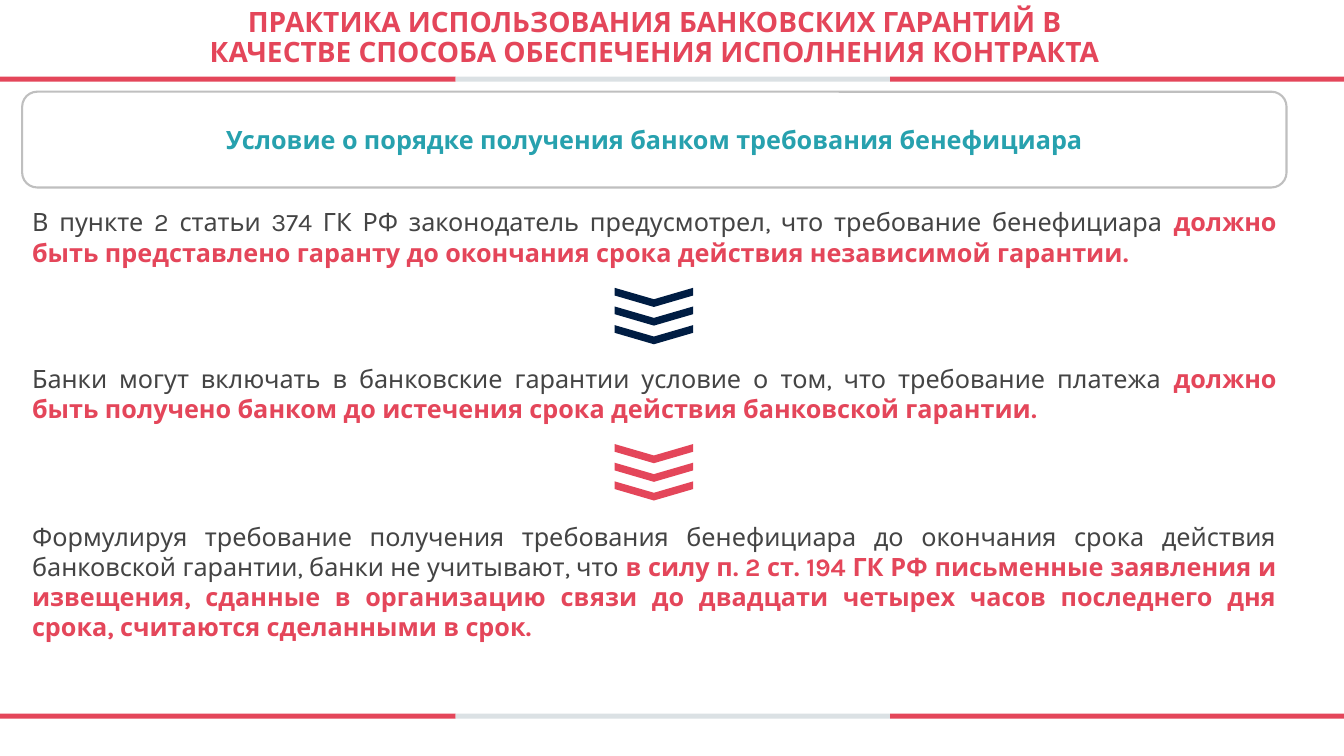
from dataclasses import dataclass

from pptx import Presentation
from pptx.dml.color import RGBColor
from pptx.enum.shapes import MSO_SHAPE as SHAPE
from pptx.enum.text import MSO_ANCHOR as ANCHOR, MSO_AUTO_SIZE as FIT, PP_ALIGN as ALIGN
from pptx.util import Inches, Pt


@dataclass(frozen=True)
class Theme:
    font: str = "Karla"
    red: str = "E4465A"
    teal: str = "27A1AE"
    navy: str = "001D43"
    text: str = "444444"
    pale: str = "DBE1E4"
    border: str = "BFBFBF"
    white: str = "FFFFFF"
    title_size: int = 20
    body_size: int = 18


T = Theme()

# Content
TITLE = ("ПРАКТИКА ИСПОЛЬЗОВАНИЯ БАНКОВСКИХ ГАРАНТИЙ В КАЧЕСТВЕ СПОСОБА "
         "ОБЕСПЕЧЕНИЯ ИСПОЛНЕНИЯ КОНТРАКТА")
HEADING = "Условие о порядке получения банком требования бенефициара"
# top, height, plain text, highlighted text
STEPS = [
    (2.0, 0.71,
     "В пункте 2 статьи 374 ГК РФ законодатель предусмотрел, что требование бенефициара ",
     "должно быть представлено гаранту до окончания срока действия независимой гарантии."),
    (3.55, 0.71,
     "Банки могут включать в банковские гарантии условие о том, что требование платежа ",
     "должно быть получено банком до истечения срока действия банковской гарантии."),
    (5.12, 1.31,
     "Формулируя требование получения требования бенефициара до окончания срока действия "
     "банковской гарантии, банки не учитывают, что ",
     "в силу п. 2 ст. 194 ГК РФ письменные заявления и извещения, сданные в организацию "
     "связи до двадцати четырех часов последнего дня срока, считаются сделанными в срок."),
]
ARROWS = [(2.56, T.navy), (4.11, T.red)]  # top of the first chevron, colour

# Layout
LEFT, WIDTH = 0.22, 12.54
BAR_TOPS, BAR_HEIGHT = (0.76, 7.08), 0.05
BAR_PARTS = [(0, 4.52, T.red), (4.52, 8.83, T.pale), (8.83, 13.33, T.red)]
CHEVRON_LEFT, CHEVRON_W, CHEVRON_H, CHEVRON_STEP = 6.39, 0.19, 0.78, 0.185


def box(left, top, width, height):
    return [Inches(v) for v in (left, top, width, height)]


def add_shape(kind, area, fill, adj=None, line=None):
    sp = slide.shapes.add_shape(kind, *area)
    sp.shadow.inherit = False
    sp.fill.solid()
    sp.fill.fore_color.rgb = RGBColor.from_string(fill)
    if line:
        sp.line.color.rgb = RGBColor.from_string(line)
        sp.line.width = Pt(1.5)
    else:
        sp.line.fill.background()
    if adj is not None:
        sp.adjustments[0] = adj
    return sp


def write(tf, runs, size=T.body_size, align=ALIGN.CENTER, anchor=ANCHOR.MIDDLE,
          spacing=None, after=0):
    """Fill a text frame with one paragraph of (text, colour, bold) runs."""
    tf.word_wrap = True
    tf.vertical_anchor = anchor
    p = tf.paragraphs[0]
    p.alignment, p.line_spacing = align, spacing
    p.space_before, p.space_after = Pt(0), Pt(after)
    for text, color, bold in runs:
        r = p.add_run()
        r.text = text
        r.font.name, r.font.size, r.font.bold = T.font, Pt(size), bold
        r.font.color.rgb = RGBColor.from_string(color)


prs = Presentation()
prs.slide_width, prs.slide_height = Inches(13.33), Inches(7.5)
slide = prs.slides.add_slide(prs.slide_layouts[5])

# Striped bars under the title and at the foot
for top in BAR_TOPS:
    for start, end, color in BAR_PARTS:
        add_shape(SHAPE.RECTANGLE, box(start, top, end - start, BAR_HEIGHT), color)

# Title
title = slide.shapes.title
title.left, title.top, title.width, title.height = box(1.97, 0, 9.04, 0.76)
write(title.text_frame, [(TITLE, T.red, True)], size=T.title_size, spacing=0.9)
title.text_frame.auto_size = FIT.NONE

# Heading panel
panel = add_shape(SHAPE.ROUNDED_RECTANGLE, box(LEFT, 0.91, WIDTH, 0.95), T.white,
                  adj=0.157, line=T.border)
write(panel.text_frame, [(HEADING, T.teal, True)])

# Steps of the argument
for top, height, plain, strong in STEPS:
    tf = slide.shapes.add_textbox(*box(LEFT, top, WIDTH, height)).text_frame
    write(tf, [(plain, T.text, False), (strong, T.red, True)],
          align=ALIGN.JUSTIFY, anchor=ANCHOR.TOP, after=12)
    tf.auto_size = FIT.SHAPE_TO_FIT_TEXT

# Triple chevrons pointing down between the steps
for top, color in ARROWS:
    chevrons = [add_shape(SHAPE.CHEVRON,
                          box(CHEVRON_LEFT, top + i * CHEVRON_STEP, CHEVRON_W, CHEVRON_H),
                          color, adj=0.598) for i in range(3)]
    for sp in chevrons:
        sp.rotation = 90
    slide.shapes.add_group_shape(chevrons)

prs.save("out.pptx")
